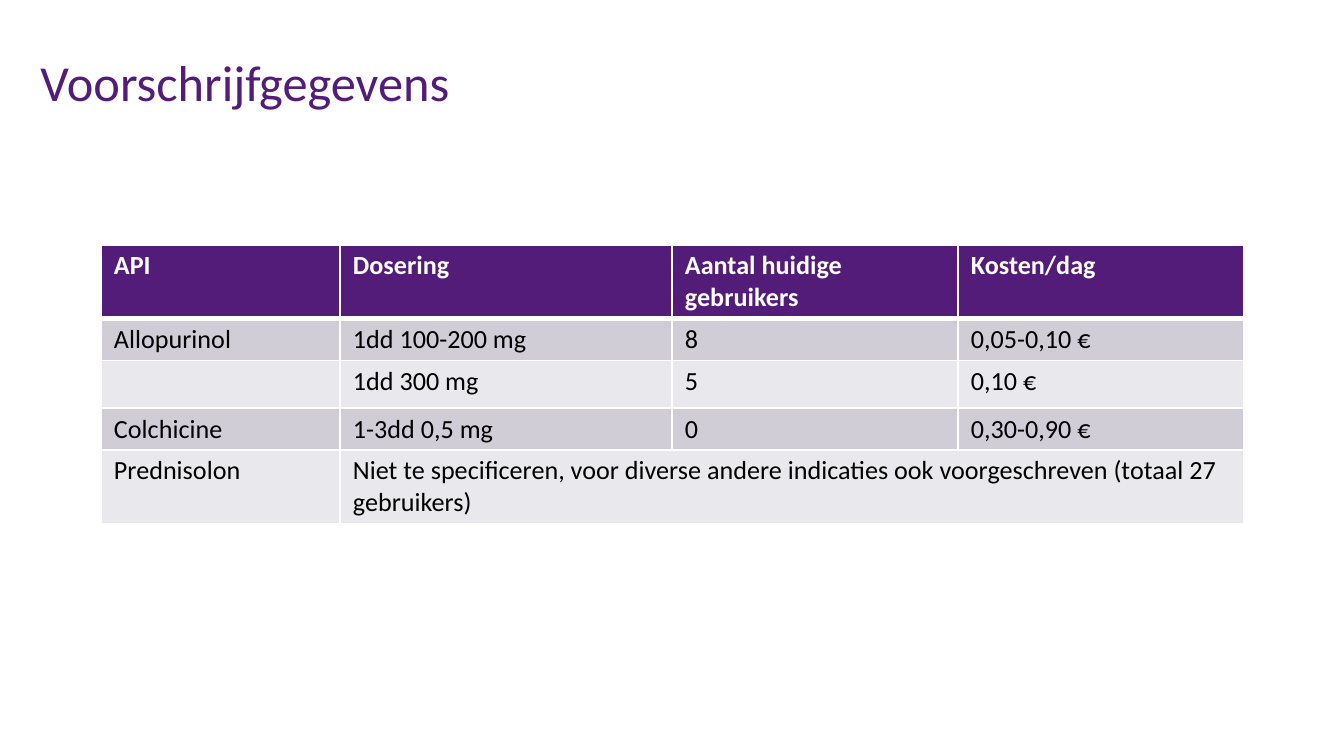
from lxml.etree import SubElement
from pptx import Presentation
from pptx.dml.color import RGBColor
from pptx.enum.text import MSO_ANCHOR, MSO_AUTO_SIZE, PP_ALIGN
from pptx.oxml.ns import qn
from pptx.util import Pt

PX = 914400 / 134.4
PURPLE, WHITE, BLACK = "521C78", "FFFFFF", "000000"
BANDS = ["D1CDD6", "E9E8EC"]


def px(n):
    """Turn pixels into EMU."""
    return round(n * PX)


def add_run(p, text, size, color, bold=False):
    r = p.add_run()
    r.text = text
    r.font.name = "Calibri"
    r.font.size = Pt(size)
    r.font.bold = bold
    r.font.color.rgb = RGBColor.from_string(color)


prs = Presentation()
prs.slide_width, prs.slide_height = px(1344), px(756)
s = prs.slides.add_slide(prs.slide_layouts[5])

# Title
title = s.shapes.title
title.left, title.top, title.width, title.height = px(27), px(34), px(1017), px(95)
tf = title.text_frame
tf.auto_size = MSO_AUTO_SIZE.NONE
tf.vertical_anchor = MSO_ANCHOR.MIDDLE
p = tf.paragraphs[0]
p.alignment = PP_ALIGN.LEFT
add_run(p, "Voorschrijfgegevens", 27, PURPLE)

# Prescription table
rows = [
    ["API", "Dosering", "Aantal huidige gebruikers", "Kosten/dag"],
    ["Allopurinol", "1dd 100-200 mg", "8", "0,05-0,10 €"],
    ["", "1dd 300 mg", "5", "0,10 €"],
    ["Colchicine", "1-3dd 0,5 mg", "0", "0,30-0,90 €"],
    ["Prednisolon", "Niet te specificeren, voor diverse andere indicaties ook "
     "voorgeschreven (totaal 27 gebruikers)", "", ""],
]
col_widths = [239, 332, 286, 286]
row_heights = [73, 42, 42, 42, 73]
table = s.shapes.add_table(len(rows), len(col_widths), px(101), px(245),
                           px(sum(col_widths)), px(sum(row_heights))).table
for col, width in zip(table.columns, col_widths):
    col.width = px(width)
for row, height in zip(table.rows, row_heights):
    row.height = px(height)
table.cell(4, 1).merge(table.cell(4, 3))

for i, texts in enumerate(rows):
    header = i == 0
    for j, text in enumerate(texts):
        cell = table.cell(i, j)
        cell.margin_left = cell.margin_right = px(13)
        cell.margin_top = cell.margin_bottom = px(5)
        tcPr = cell._tc.get_or_add_tcPr()
        for side in "LRTB":
            thick = (header and side == "B") or (i == 1 and side == "T")
            ln = SubElement(tcPr, qn(f"a:ln{side}"), w=str(Pt(3 if thick else 1)))
            fill = SubElement(ln, qn("a:solidFill"))
            SubElement(fill, qn("a:srgbClr"), val=WHITE)
        cell.fill.solid()
        cell.fill.fore_color.rgb = RGBColor.from_string(
            PURPLE if header else BANDS[(i - 1) % 2])
        if not cell.is_spanned:
            add_run(cell.text_frame.paragraphs[0], text, 14,
                    WHITE if header else BLACK, header)

prs.save("out.pptx")
